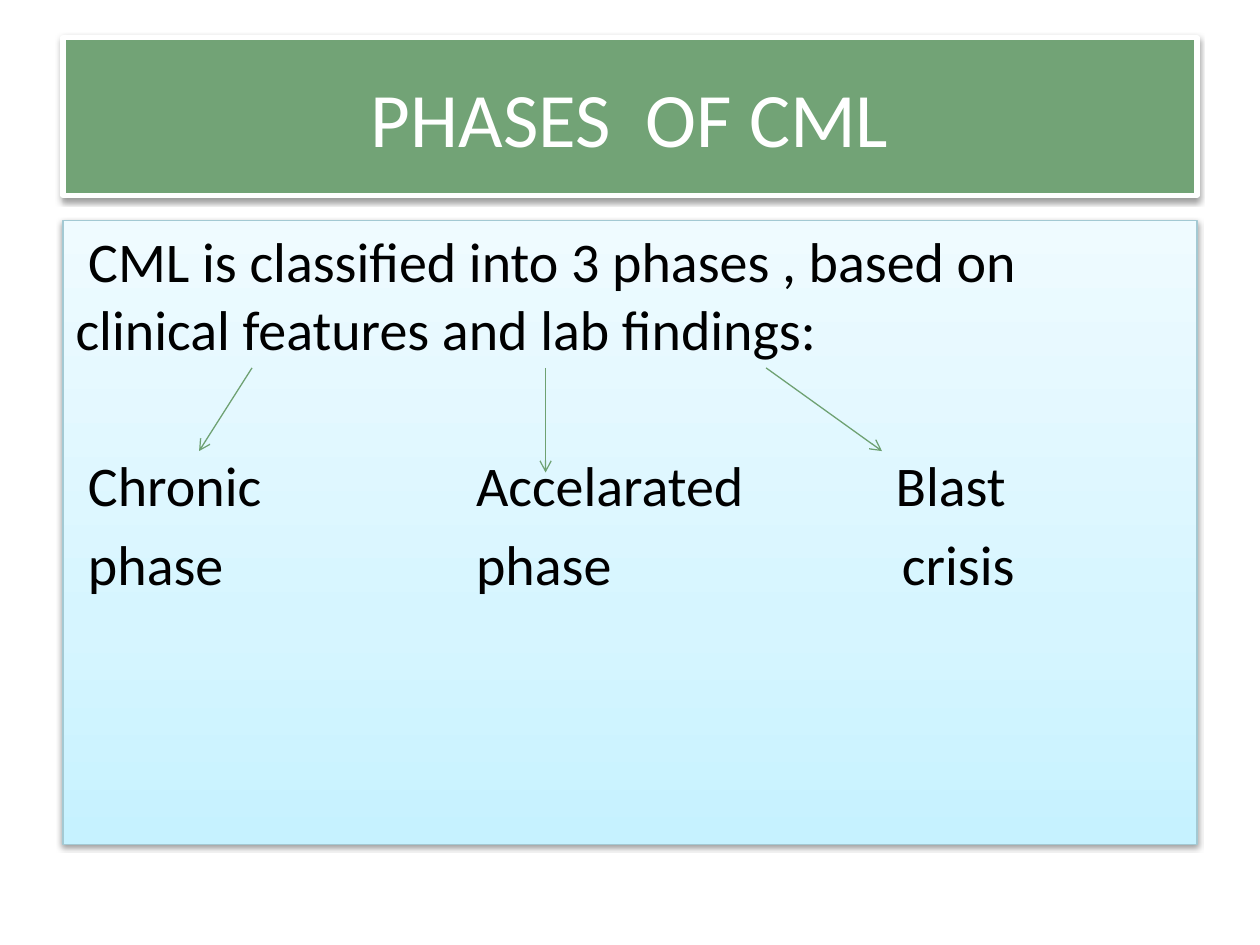
"""Build a slide showing the three phases of CML."""
from pptx import Presentation
from pptx.dml.color import RGBColor
from pptx.enum import shapes, text
from pptx.oxml import parse_xml
from pptx.oxml.ns import nsdecls, qn
from pptx.util import Inches, Pt

GREEN = RGBColor(0x72, 0xA3, 0x76)
ARROW_GREEN = RGBColor(0x6E, 0xA1, 0x72)
WHITE = RGBColor(0xFF, 0xFF, 0xFF)
BLACK = RGBColor(0x00, 0x00, 0x00)
BORDER_BLUE = RGBColor(0xA3, 0xC9, 0xD3)
BODY_STOPS = (
    (0, RGBColor(0xC6, 0xF2, 0xFF)),
    (35, RGBColor(0xD6, 0xF5, 0xFF)),
    (100, RGBColor(0xEF, 0xFB, 0xFF)),
)


def drawing(tag, content="", **attributes):
    listed = " ".join(f'{name}="{value}"' for name, value in attributes.items())
    return parse_xml(f'<a:{tag} {nsdecls("a")} {listed}>{content}</a:{tag}>')


def write(paragraph, words, size=32, color=BLACK, font="Calibri",
          align=text.PP_ALIGN.LEFT, before=0, margin=0, indent=0):
    properties = paragraph._p.get_or_add_pPr()
    properties.set("marL", str(Inches(margin)))
    properties.set("indent", str(Inches(indent)))
    properties.append(drawing("buNone"))
    paragraph.alignment = align
    paragraph.space_before = Pt(before)
    run = paragraph.add_run()
    run.text = words
    run.font.name = font
    run.font.size = Pt(size)
    run.font.color.rgb = color


class PhaseSlide:
    def __init__(self, presentation):
        self.slide = presentation.slides.add_slide(presentation.slide_layouts[1])

    def place(self, shape, top, height, line_color, line_width):
        shape.left, shape.top = Inches(0.5), Inches(top)
        shape.width, shape.height = Inches(9), Inches(height)
        shape.line.color.rgb = line_color
        shape.line.width = Pt(line_width)
        shape.shadow.inherit = False
        shadow = drawing(
            "outerShdw", '<a:srgbClr val="000000"><a:alpha val="38000"/></a:srgbClr>',
            blurRad=Pt(3.1), dist=Pt(1.6), dir=5400000, rotWithShape=0)
        shape._element.spPr.find(qn("a:effectLst")).append(shadow)
        shape.text_frame.auto_size = text.MSO_AUTO_SIZE.NONE
        shape.text_frame.word_wrap = True

    def title(self, words):
        shape = self.slide.shapes.title
        shape.fill.solid()
        shape.fill.fore_color.rgb = GREEN
        self.place(shape, 0.3, 1.25, WHITE, 3)
        shape.text_frame.vertical_anchor = text.MSO_ANCHOR.MIDDLE
        write(shape.text_frame.paragraphs[0], words, size=44, color=WHITE,
              align=text.PP_ALIGN.CENTER)

    def body(self, words):
        shape = self.slide.placeholders[1]
        shape.fill.gradient()
        shape.fill.gradient_angle = 90
        stops = shape._element.spPr.find(qn("a:gradFill")).find(qn("a:gsLst"))
        stops.clear()
        for position, color in BODY_STOPS:
            stops.append(drawing("gs", f'<a:srgbClr val="{color}"/>', pos=position * 1000))
        self.place(shape, 1.75, 4.95, BORDER_BLUE, 0.75)
        write(shape.text_frame.paragraphs[0], words, indent=0.1)

    def phase(self, left, first, second, margin=0):
        box = self.slide.shapes.add_textbox(
            Inches(left), Inches(3.53), Inches(2.4), Inches(1.3))
        frame = box.text_frame
        frame.word_wrap = True
        write(frame.paragraphs[0], first)
        write(frame.add_paragraph(), second, before=6.4, margin=margin)

    def arrow(self, start, end):
        connector = self.slide.shapes.add_connector(
            shapes.MSO_CONNECTOR.STRAIGHT, *map(Inches, start + end))
        connector.line.color.rgb = ARROW_GREEN
        connector.line.width = Pt(0.75)
        connector.line._get_or_add_ln().append(drawing("tailEnd", type="arrow"))
        connector._element.spPr.append(drawing("effectLst"))


def main():
    presentation = Presentation()
    presentation.slide_width, presentation.slide_height = Inches(10), Inches(7.5)
    phases = PhaseSlide(presentation)
    phases.title("PHASES  OF CML")
    phases.body("CML is classified into 3 phases , based on clinical features and lab findings:")
    phases.phase(0.6, "Chronic", "phase")
    phases.phase(3.68, "Accelarated", "phase")
    phases.phase(7.01, "Blast", "crisis", margin=0.05)
    for start, end in (((2, 2.92), (1.58, 3.58)),
                       ((4.33, 2.92), (4.33, 3.75)),
                       ((6.08, 2.92), (7, 3.58))):
        phases.arrow(start, end)
    presentation.save("out.pptx")


if __name__ == "__main__":
    main()
